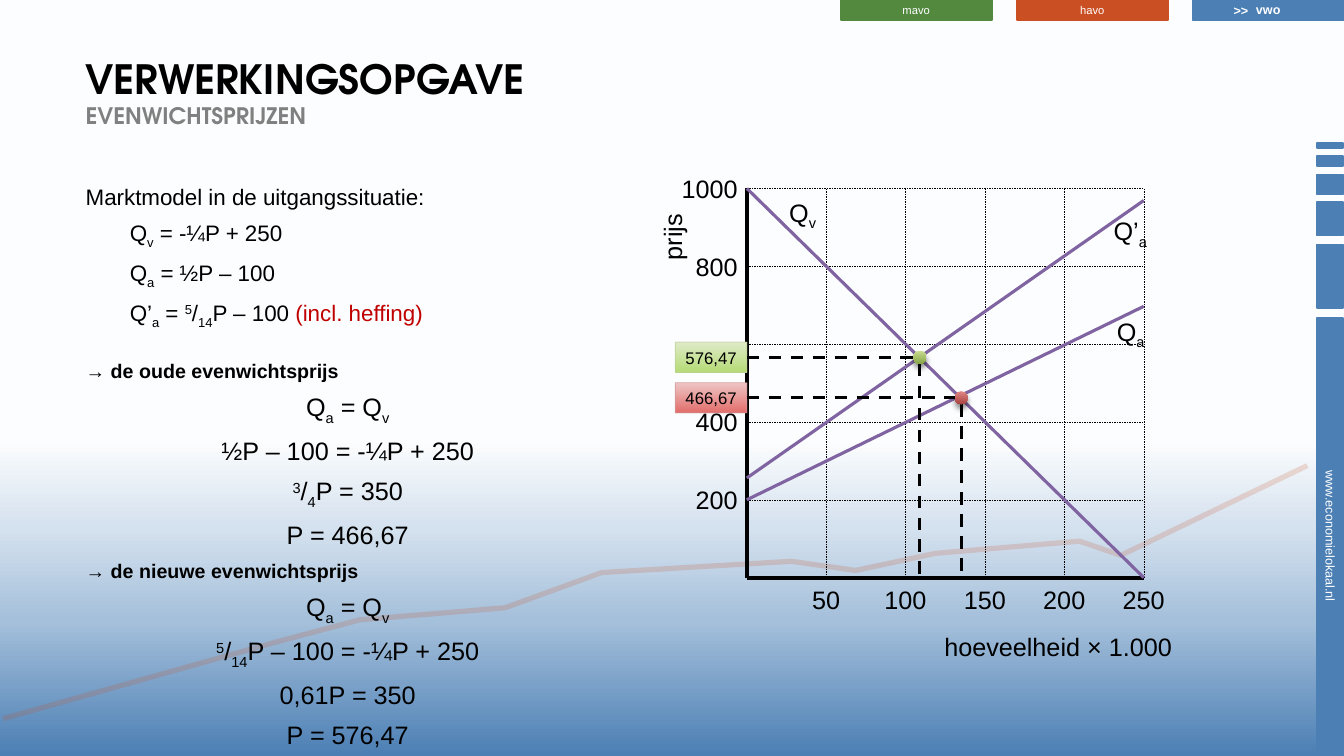
from lxml import etree
from pptx import Presentation
from pptx.dml.color import RGBColor
from pptx.enum.dml import MSO_LINE
from pptx.enum.shapes import MSO_CONNECTOR, MSO_SHAPE
from pptx.enum.text import MSO_ANCHOR, MSO_AUTO_SIZE, PP_ALIGN
from pptx.oxml.ns import qn
from pptx.util import Pt

RECTANGLE, OVAL = MSO_SHAPE.RECTANGLE, MSO_SHAPE.OVAL
STRAIGHT, DASH = MSO_CONNECTOR.STRAIGHT, MSO_LINE.DASH
LEFT, CENTER = PP_ALIGN.LEFT, PP_ALIGN.CENTER
TOP, MIDDLE = MSO_ANCHOR.TOP, MSO_ANCHOR.MIDDLE
BODY_FONT, TITLE_FONT = "Arial", "TeX Gyre Adventor"

COLORS = {
    "black": "000000", "white": "FFFFFF", "grey": "808080", "note": "C00000",
    "blue": "4C7FB4", "orange": "CA4F22", "green": "52893F", "curve": "8064A2",
    "sky1": "A5C0DB", "sky2": "D4E1EE", "sky3": "FCFDFE",
    "red dot top": "E18785", "red dot end": "A7423F",
    "red tag top": "EDC5C4", "red tag end": "E26E6C", "red tag line": "D19595",
    "green dot top": "C9DD90", "green dot end": "86A547",
    "green tag top": "DFEAC7", "green tag end": "B5DB75", "green tag line": "BECE99",
}

# Content; "|" splits spans, a leading _ is subscript, ^ superscript, ! red
TITLE, SUBTITLE = "VERWERKINGSOPGAVE", "EVENWICHTSPRIJZEN"
BODY = [  # kind, text
    ("intro", "Marktmodel in de uitgangssituatie:"),
    ("model", "Q|_v| = -¼P + 250"),
    ("model", "Q|_a| = ½P – 100"),
    ("model", "Q’|_a| = |^5|/|_14|P – 100 |!(incl. heffing)"),
    ("first heading", "→ de oude evenwichtsprijs"),
    ("step", "Q|_a| = Q|_v"),
    ("step", "½P – 100 = -¼P + 250"),
    ("step", "^3|/|_4|P = 350"),
    ("step", "P = 466,67"),
    ("heading", "→ de nieuwe evenwichtsprijs"),
    ("step", "Q|_a| = Q|_v"),
    ("step", "^5|/|_14|P – 100 = -¼P + 250"),
    ("step", "0,61P = 350"),
    ("step", "P = 576,47"),
]
KINDS = {  # level, left margin, size, bold, alignment, space before
    "intro": (0, 0, 16, False, LEFT, 0),
    "model": (1, 31.5, 16, False, LEFT, 3.2),
    "first heading": (0, 0, 14, True, LEFT, 17.2),
    "heading": (1, 0, 14, True, LEFT, 2.8),
    "step": (1, 0, 18, False, CENTER, 3.5),
}
TABS = [("mavo", "green", 8, False), ("havo", "orange", 8, False), ("vwo", "blue", 9, True)]
SIDE_BARS = [  # top, length, text
    (227.2, 311.8, "www.economielokaal.nl"), (174.6, 45.4, ""), (144.4, 23.8, ""),
    (124.6, 14.4, ""), (111.6, 7.2, ""), (101.9, 3.6, ""),
]
TREND = [(933.8, 332.6), (800.6, 396.7), (771.1, 386.6), (668.2, 395.3), (611.3, 407.5),
         (565.2, 401), (429.8, 409), (360.7, 434.2), (257, 442.8), (194.4, 459.4), (2.2, 513.4)]
QUANTITIES = [50, 100, 150, 200, 250]
PRICES = [200, 400, 600, 800, 1000]
PRICE_LABELS = [200, 400, 800, 1000]
CURVES = [((0, 1000), (250, 0)), ((0, 200), (250, 697)), ((0, 256), (250, 969))]
GRAPH_TEXTS = [  # text, left, top, width, rotation
    ("hoeveelheid × 1.000", 667.4, 447.1, 178.6, 0), ("prijs", 456.5, 154.8, 47.5, 270),
    ("Q|_v", 556.6, 137.5, 34.6, 0), ("Q|_a", 790.6, 222.5, 35.3, 0),
    ("Q’|_a", 788.4, 150.5, 39.6, 0),
]
EQUILIBRIA = [("466,67", "red", 135, 462), ("576,47", "green", 109, 566)]
GRAPH_LEFT, GRAPH_TOP, GRAPH_WIDTH, GRAPH_HEIGHT = 533.5, 134.6, 283.5, 278

deck = Presentation()
deck.slide_width, deck.slide_height = Pt(960), Pt(540)
slide = deck.slides.add_slide(deck.slide_layouts[1])
shapes = slide.shapes


def rgb(name):
    return RGBColor.from_string(COLORS[name])


def set_font(font, size, color="black", bold=False, name=BODY_FONT):
    font.name, font.size, font.bold = name, Pt(size), bold
    font.color.rgb = rgb(color)


def add_spans(para, text):
    for piece in text.split("|"):
        mark = piece[0] if piece[:1] in ("_", "^", "!") else ""
        span = para.add_run()
        span.text = piece[len(mark):]
        if mark == "!":
            span.font.color.rgb = rgb("note")
        elif mark:
            span.font._element.set("baseline", "-25000" if mark == "_" else "30000")


def set_alpha(element, percent):
    color = next(element.iter(qn("a:srgbClr")))
    etree.SubElement(color, qn("a:alpha")).set("val", str(percent * 1000))


def set_gradient(fill, element, stops, angle):
    fill.gradient()
    fill.gradient_angle = 360 - angle
    stop_list = next(element.iter(qn("a:gsLst")))
    for stop in list(stop_list):
        stop_list.remove(stop)
    for position, name in stops:
        stop = etree.SubElement(stop_list, qn("a:gs"), pos=str(position * 1000))
        etree.SubElement(stop, qn("a:srgbClr"), val=COLORS[name])


def add_box(kind, left, top, width, height):
    box = shapes.add_shape(kind, Pt(left), Pt(top), Pt(width), Pt(height))
    box.shadow.inherit = False
    return box


def add_bar(left, top, width, height, color, text="", size=9, bold=False):
    bar = add_box(RECTANGLE, left, top, width, height)
    bar.fill.solid()
    bar.fill.fore_color.rgb = bar.line.color.rgb = rgb(color)
    bar.line.width = Pt(1.25)
    if text:
        frame = bar.text_frame
        frame.margin_top, frame.margin_bottom = Pt(0), Pt(0.7)
        frame.vertical_anchor = MIDDLE
        para = frame.paragraphs[0]
        para.alignment = CENTER
        para.add_run().text = text
        set_font(para.font, size, "white", bold)
    return bar


def add_label(text, left, top, width, size=18, color="black", bold=False, height=29):
    label = shapes.add_textbox(Pt(left), Pt(top), Pt(width), Pt(height))
    label.text_frame.word_wrap = False
    para = label.text_frame.paragraphs[0]
    add_spans(para, text)
    set_font(para.font, size, color, bold)
    return label


def add_line(start, end, width, color="black", dashed=False):
    line = shapes.add_connector(STRAIGHT, *(Pt(value) for value in (*start, *end)))
    line.line.color.rgb, line.line.width = rgb(color), Pt(width)
    if dashed:
        line.line.dash_style = DASH
    etree.SubElement(line._element.spPr, qn("a:effectLst"))
    return line


def plot(quantity, price):
    return (GRAPH_LEFT + GRAPH_WIDTH * quantity / 250,
            GRAPH_TOP + GRAPH_HEIGHT * (1 - price / 1000))


# Background, side bars, tabs and trend line
set_gradient(slide.background.fill, slide._element,
             [(0, "blue"), (18, "sky1"), (30, "sky2"), (42, "sky3"), (50, "white")], 270)
for top, length, text in SIDE_BARS:
    bar = add_bar(950 - length / 2, top + length / 2 - 9.35, length, 18.7, "blue", text)
    bar.rotation = 90
for index, (text, color, size, bold) in enumerate(TABS):
    add_bar(600.5 + 125.7 * index, 0, 108, 14.4, color, text, size, bold)
builder = shapes.build_freeform(Pt(TREND[0][0]), Pt(TREND[0][1]))
builder.add_line_segments([(Pt(x), Pt(y)) for x, y in TREND[1:]], close=False)
trend = builder.convert_to_shape()
trend.shadow.inherit = False
trend.fill.background()
trend.line.color.rgb, trend.line.width = rgb("orange"), Pt(3.75)
set_alpha(trend.line._ln, 19)
add_label(">>", 874.1, -1.4, 25.2, 9, "white", True, 18)

# Title and body, placed above the decoration
title, body = shapes.title, slide.placeholders[1]
for holder, anchor, area in ((title, MIDDLE, (54, 35, 721.4, 64)),
                             (body, TOP, (54, 127.4, 388.8, 411))):
    shapes._spTree.append(holder._element)
    holder.left, holder.top, holder.width, holder.height = (Pt(value) for value in area)
    holder.text_frame.auto_size = MSO_AUTO_SIZE.NONE
    holder.text_frame.vertical_anchor = anchor
body.text_frame.margin_bottom = Pt(0)
para = title.text_frame.paragraphs[0]
para.alignment, para.line_spacing = LEFT, 0.95
for text, size, color in ((TITLE, 28.8, "black"), (SUBTITLE, 16.2, "grey")):
    if text == SUBTITLE:
        para.add_line_break()
    span = para.add_run()
    span.text = text
    set_font(span.font, size, color, True, TITLE_FONT)
for index, (kind, text) in enumerate(BODY):
    level, margin, size, bold, alignment, before = KINDS[kind]
    para = body.text_frame.add_paragraph() if index else body.text_frame.paragraphs[0]
    properties = para._element.get_or_add_pPr()
    properties.set("marL", str(Pt(margin)))
    properties.set("indent", "0")
    etree.SubElement(properties, qn("a:buNone"))
    para.level, para.alignment = level, alignment
    para.space_before, para.space_after = Pt(before), Pt(3.4)
    add_spans(para, text)
    set_font(para.font, size, "black", bold)

# Axes, grid and labels
for end in ((0, 1000), (250, 0)):
    add_line(plot(0, 0), plot(*end), 3)
for price in PRICES:
    add_line(plot(0, price), plot(250, price), 0.25, dashed=True)
for quantity in QUANTITIES:
    add_line(plot(quantity, 0), plot(quantity, 1000), 0.25, dashed=True)
    width = 14.4 + 10 * len(str(quantity))
    add_label(str(quantity), plot(quantity, 0)[0] - width / 2, 414, width)
for price in PRICE_LABELS:
    width = 14.4 + 10 * len(str(price))
    add_label(str(price), 534.2 - width, plot(0, price)[1] - 14.4, width)
for text, left, top, width, rotation in GRAPH_TEXTS:
    add_label(text, left, top, width).rotation = rotation

# Supply and demand curves
for start, end in CURVES:
    add_line(plot(*start), plot(*end), 2.25, "curve")

# Equilibria: price tag, dashed guides and dot
for text, hue, quantity, price in EQUILIBRIA:
    x, y = plot(quantity, price)
    tag = add_box(RECTANGLE, GRAPH_LEFT - 51.1, y - 10.8, 51.1, 21.6)
    set_gradient(tag.fill, tag._element, [(0, hue + " tag top"), (100, hue + " tag end")], 90)
    tag.line.color.rgb, tag.line.width = rgb(hue + " tag line"), Pt(0.75)
    set_alpha(tag.line._ln, 60)
    tag.text_frame.word_wrap = False
    para = tag.text_frame.paragraphs[0]
    para.alignment = CENTER
    para.add_run().text = text
    set_font(para.font, 12)
    guide = add_line((GRAPH_LEFT, y), (x - 4.7, y), 2.25, dashed=True)
    guide.begin_connect(tag, 3)
    add_line((x, y + 4.7), plot(quantity, 0), 2.25, dashed=True)
    dot = add_box(OVAL, x - 4.7, y - 4.7, 9.4, 9.4)
    set_gradient(dot.fill, dot._element, [(0, hue + " dot top"), (100, hue + " dot end")], 90)
    dot.line.fill.background()
    shadow = etree.SubElement(dot._element.spPr.find(qn("a:effectLst")), qn("a:outerShdw"),
                              blurRad=str(Pt(4)), dist=str(Pt(3)), dir="5400000")
    etree.SubElement(shadow, qn("a:srgbClr"), val=COLORS["black"])
    set_alpha(shadow, 46)

deck.save("out.pptx")
